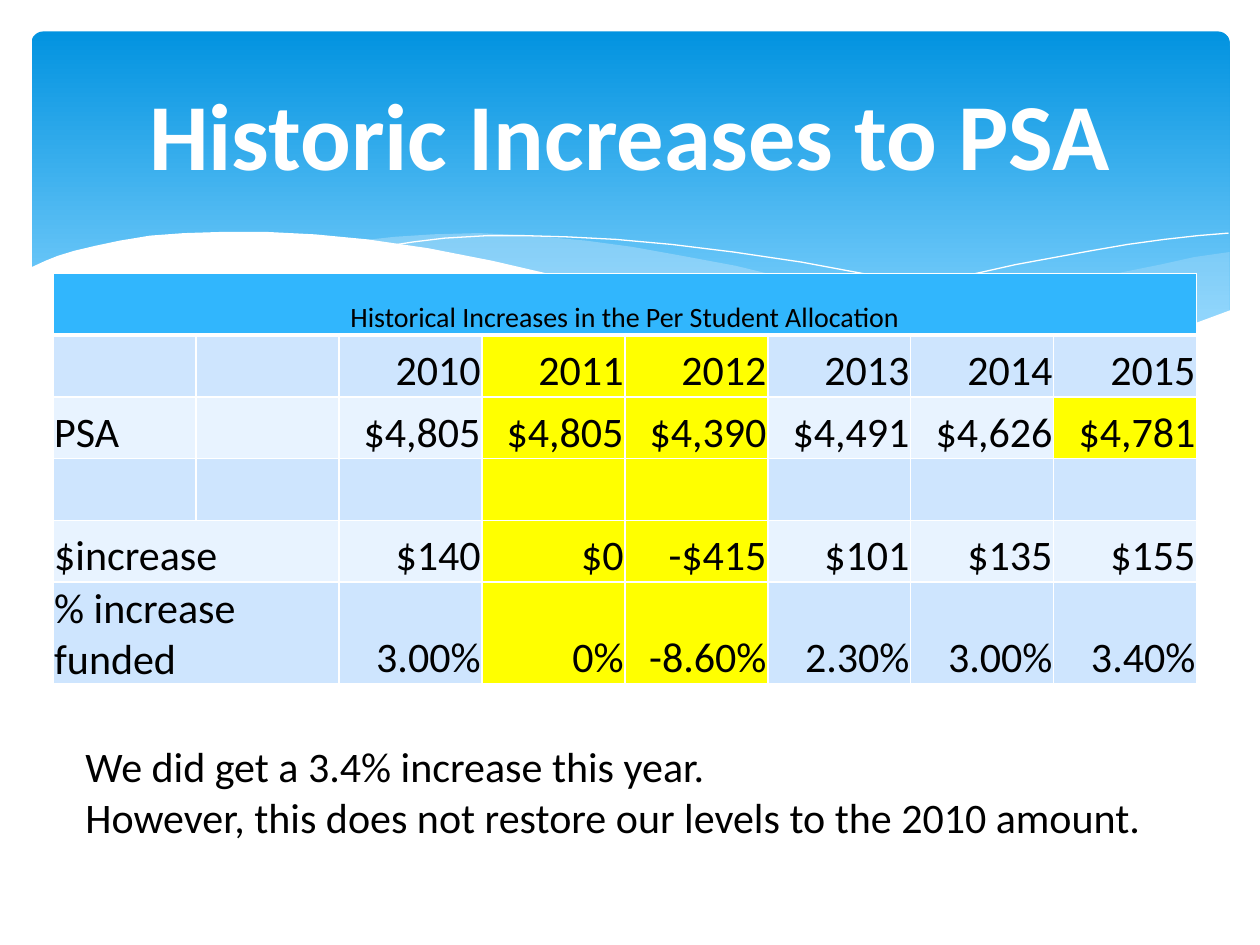
from lxml.etree import SubElement
from pptx import Presentation
from pptx.dml.color import RGBColor
from pptx.enum.shapes import MSO_SHAPE as SHAPE
from pptx.enum.text import MSO_ANCHOR as ANCHOR, PP_ALIGN as ALIGN
from pptx.oxml.ns import qn
from pptx.util import Inches, Pt


def color(hex_code):
    return RGBColor.from_string(hex_code)


def write(frame, text, size=24, ink="000000", bold=False, align=ALIGN.LEFT, anchor=ANCHOR.TOP):
    frame.word_wrap = True
    frame.vertical_anchor = anchor
    frame.text = text
    for paragraph in frame.paragraphs:
        paragraph.alignment = align
        for run in paragraph.runs:
            run.font.name = "Calibri"
            run.font.size = Pt(size)
            run.font.bold = bold
            run.font.color.rgb = color(ink)


prs = Presentation()
prs.slide_width, prs.slide_height = Inches(10), Inches(7.5)
slide = prs.slides.add_slide(prs.slide_layouts[6])
shapes = slide.shapes

banner = shapes.add_shape(SHAPE.ROUNDED_RECTANGLE, Inches(0.25), Inches(0.25), Inches(9.51), Inches(2.7))
banner.adjustments[0] = 0.034
banner.shadow.inherit = False
banner.line.fill.background()
banner.fill.gradient()
banner.fill.gradient_angle = 270
for stop, position, shade in zip(banner.fill.gradient_stops, (0, 0.9), ("0293E0", "83D3FE")):
    stop.position = position
    stop.color.rgb = color(shade)

right_swell = [
    (9.76, 2), (9.48, 2.04), (9.21, 2.1), (8.91, 2.16), (8.61, 2.23), (8.05, 2.37), (7.53, 2.48),
    (7.06, 2.57), (6.61, 2.65), (6.91, 2.69), (7.19, 2.72), (7.57, 2.76), (8.03, 2.78), (8.44, 2.77),
    (8.81, 2.73), (9.13, 2.67), (9.42, 2.59), (9.63, 2.52), (9.76, 2.47),
]
middle_swell = [
    (8.93, 2.73), (8.37, 2.65), (7.75, 2.54), (7.06, 2.4), (6.29, 2.22), (5.84, 2.11), (5.41, 2.03),
    (5.02, 1.96), (4.65, 1.91), (4.2, 1.87), (3.8, 1.85), (3.44, 1.86), (3.13, 1.88), (2.86, 1.91),
    (3.23, 1.96), (3.62, 2.03), (4.04, 2.11), (4.49, 2.22), (5.3, 2.4), (6.01, 2.55), (6.5, 2.64),
    (6.95, 2.7), (7.36, 2.75), (7.73, 2.77), (8.07, 2.78), (8.48, 2.77), (8.76, 2.75),
]
long_crest = [
    (3.09, 1.95), (3.28, 1.92), (3.53, 1.89), (3.87, 1.87), (4.16, 1.87), (4.5, 1.88), (4.89, 1.9),
    (5.33, 1.94), (5.82, 2), (6.36, 2.08), (6.95, 2.19), (7.6, 2.33), (8.31, 2.51), (9.07, 2.72),
]
right_crest = [
    (6.13, 2.57), (6.53, 2.46), (6.95, 2.35), (7.48, 2.23), (8.06, 2.1), (8.66, 1.99), (8.95, 1.94),
    (9.24, 1.9), (9.51, 1.87), (9.75, 1.85),
]
white_wave = [
    (9.77, 2.46), (9.5, 2.56), (9.2, 2.65), (8.87, 2.71), (8.5, 2.75), (8.09, 2.77), (7.61, 2.75),
    (7.08, 2.7), (6.48, 2.62), (5.79, 2.5), (5.03, 2.33), (4.47, 2.2), (3.91, 2.07), (3.4, 1.97),
    (2.92, 1.9), (2.5, 1.86), (2.11, 1.84), (1.77, 1.84), (1.46, 1.85), (1.19, 1.87), (0.95, 1.91),
    (0.76, 1.95), (0.59, 1.99), (0.46, 2.03), (0.36, 2.07), (0.23, 2.13), (0.23, 3.29), (9.77, 3.29),
]
waves = [
    (right_swell, "C6E7FC", 29),
    (middle_swell, "C6E7FC", 40),
    (long_crest, None, 100),
    (right_crest, None, 100),
    (white_wave, "FFFFFF", 100),
]
for points, shade, opacity in waves:
    start, *rest = [(Inches(x), Inches(y)) for x, y in points]
    outline = shapes.build_freeform(*start)
    outline.add_line_segments(rest, close=shade is not None)
    wave = outline.convert_to_shape()
    wave.shadow.inherit = False
    if shade is None:
        wave.fill.background()
        wave.line.color.rgb = color("FFFFFF")
        wave.line.width = Pt(0)
        continue
    wave.line.fill.background()
    wave.fill.solid()
    wave.fill.fore_color.rgb = color(shade)
    if opacity < 100:
        tint = wave.fill._xPr.find(qn("a:solidFill"))[0]
        SubElement(tint, qn("a:alpha"), val=str(opacity * 1000))

title = shapes.add_textbox(Inches(0.5), Inches(0.37), Inches(9), Inches(1.37))
write(title.text_frame, "Historic Increases to PSA", size=54, ink="FFFFFF", bold=True,
      align=ALIGN.CENTER, anchor=ANCHOR.MIDDLE)

remarks = shapes.add_textbox(Inches(0.58), Inches(5.83), Inches(9), Inches(0.91))
write(remarks.text_frame, "We did get a 3.4% increase this year.\n"
      "However, this does not restore our levels to the 2010 amount.")

rows = [
    ["Historical Increases in the Per Student Allocation"] + [""] * 7,
    ["", "", "2010", "2011", "2012", "2013", "2014", "2015"],
    ["PSA", "", "$4,805", "$4,805", "$4,390", "$4,491", "$4,626", "$4,781"],
    [""] * 8,
    ["$increase", "", "$140", "$0", "-$415", "$101", "$135", "$155"],
    ["% increase funded", "", "3.00%", "0%", "-8.60%", "2.30%", "3.00%", "3.40%"],
]
allocation = shapes.add_table(6, 8, Inches(0.42), Inches(2.17), Inches(9.08), Inches(2.94)).table
for column in allocation.columns:
    column.width = Inches(9.08 / 8)
for row in allocation.rows:
    row.height = Inches(0.49)

for r, values in enumerate(rows):
    for c, value in enumerate(values):
        cell = allocation.cell(r, c)
        borders = {"lnL": 1, "lnR": 1, "lnT": 3 if r == 1 else 1, "lnB": 3 if r == 0 else 1}
        for side, weight in borders.items():
            edge = SubElement(cell._tc.get_or_add_tcPr(), qn(f"a:{side}"), w=str(Pt(weight)))
            SubElement(SubElement(edge, qn("a:solidFill")), qn("a:srgbClr"), val="FFFFFF")
        highlighted = r > 0 and c in (3, 4) or (r, c) == (2, 7)
        band = "31B6FD" if r == 0 else "CEE5FE" if r % 2 else "E8F3FF"
        cell.fill.solid()
        cell.fill.fore_color.rgb = color("FFFF00" if highlighted else band)
        if value:
            cell.margin_left = cell.margin_right = cell.margin_top = Inches(0.01)
            cell.margin_bottom = 0
            cell.vertical_anchor = ANCHOR.BOTTOM
            align = ALIGN.CENTER if r == 0 else ALIGN.RIGHT if c > 1 else ALIGN.LEFT
            write(cell.text_frame, value, size=16 if r == 0 else 24, align=align, anchor=None)

for r, last_column in ((0, 7), (4, 1), (5, 1)):
    allocation.cell(r, 0).merge(allocation.cell(r, last_column))

prs.save("out.pptx")
